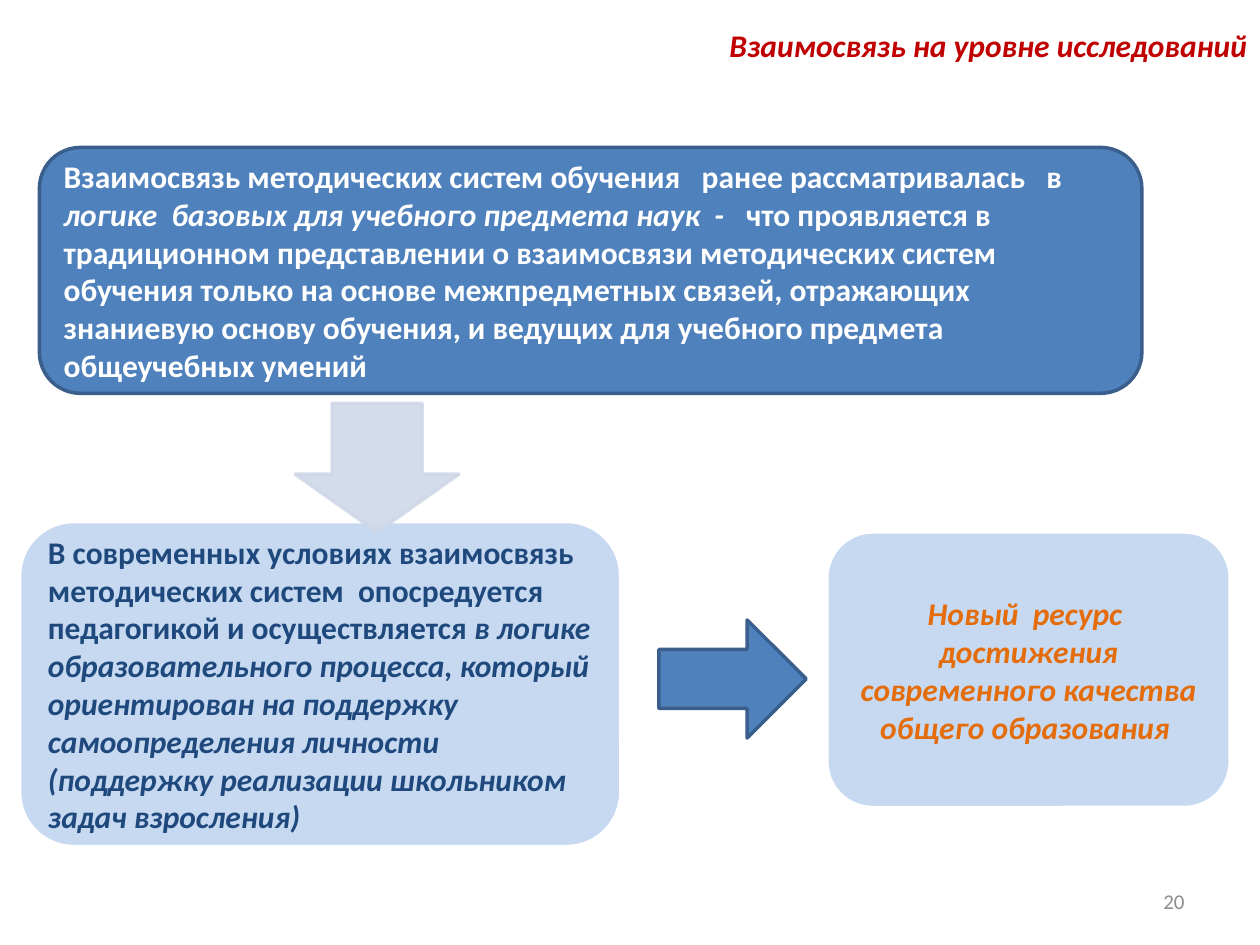
from lxml import etree
from pptx import Presentation
from pptx.dml.color import RGBColor
from pptx.enum import shapes, text
from pptx.oxml import ns
from pptx.util import Pt

WHITE = RGBColor(0xFF, 0xFF, 0xFF)
RED = RGBColor(0xC0, 0x00, 0x00)
GRAY = RGBColor(0x8C, 0x8C, 0x8C)
BLUE = RGBColor(0x4F, 0x81, 0xBD)
DARK_BLUE = RGBColor(0x3A, 0x5F, 0x8C)
PALE_BLUE = RGBColor(0xC6, 0xD9, 0xF1)
NAVY = RGBColor(0x1F, 0x49, 0x7D)
ORANGE = RGBColor(0xE4, 0x6C, 0x0A)
MIST = RGBColor(0xD0, 0xD8, 0xE8)

LEFT, CENTER, RIGHT = text.PP_ALIGN.LEFT, text.PP_ALIGN.CENTER, text.PP_ALIGN.RIGHT
TOP, MIDDLE = text.MSO_ANCHOR.TOP, text.MSO_ANCHOR.MIDDLE
PRESET = shapes.MSO_SHAPE

# Runs are (wording, italic); frames are (left, top, width, height) in points.
TITLE = [("Взаимосвязь на уровне исследований", True)]
TITLE_FRAME = (67.5, 11.5, 652.5, 29)
PAGE_NUMBER = "20"
PAGE_NUMBER_FRAME = (516, 500.5, 168, 28.75)

STATEMENTS = [
    {"frame": (22.5, 84.25, 630, 140.5), "fill": BLUE, "line": DARK_BLUE,
     "color": WHITE, "align": LEFT, "runs": [
         ("Взаимосвязь методических систем обучения   ранее рассматривалась   в", False),
         (" логике  базовых для учебного предмета наук  - ", True),
         ("  что проявляется в традиционном представлении о взаимосвязи "
          "методических систем обучения только на основе межпредметных связей, "
          "отражающих знаниевую основу обучения, и ведущих для учебного предмета "
          "общеучебных умений", False)]},
    {"frame": (11.25, 298, 343.5, 185.75), "fill": PALE_BLUE, "line": WHITE,
     "color": NAVY, "align": LEFT, "runs": [
         ("В современных условиях взаимосвязь методических систем  опосредуется "
          "педагогикой и осуществляется ", False),
         ("в логике образовательного процесса, который ориентирован на поддержку  "
          "самоопределения личности (поддержку реализации школьником задач "
          "взросления)", True)]},
    {"frame": (472.5, 304, 230.5, 157.5), "fill": PALE_BLUE, "line": WHITE,
     "color": ORANGE, "align": CENTER, "runs": [
         ("Новый  ресурс  достижения современного качества общего образования ", True)]},
]
RESULT_ARROW_FRAME = (376.5, 354.25, 84.25, 67.5)
TRANSITION_ARROW_FRAME = (168.75, 230.5, 93.5, 73.5)


def points(frame):
    return [Pt(value) for value in frame]


def write(shape, runs, color, align, anchor=MIDDLE, size=18, bold=True):
    frame = shape.text_frame
    frame.word_wrap = True
    frame.vertical_anchor = anchor
    paragraph = frame.paragraphs[0]
    paragraph.alignment = align
    for wording, italic in runs:
        run = paragraph.add_run()
        run.text = wording
        font = run.font
        font.name, font.size = "Calibri", Pt(size)
        font.bold, font.italic = bold, italic
        font.color.rgb = color


def add_block(slide, preset, frame, fill, line):
    block = slide.shapes.add_shape(preset, *points(frame))
    block.shadow.inherit = False
    block.fill.solid()
    block.fill.fore_color.rgb = fill
    block.line.color.rgb = line
    block.line.width = Pt(2)
    return block


def set_opacity(shape, percent):
    """Apply the opacity to both the fill and the outline."""
    for color in shape.element.spPr.iter(ns.qn("a:srgbClr")):
        etree.SubElement(color, ns.qn("a:alpha")).set("val", str(percent * 1000))


def main():
    deck = Presentation()
    deck.slide_width, deck.slide_height = Pt(720), Pt(540)
    slide = deck.slides.add_slide(deck.slide_layouts[5])

    title = slide.shapes.title
    title.left, title.top, title.width, title.height = points(TITLE_FRAME)
    write(title, TITLE, RED, RIGHT, anchor=TOP)
    title.text_frame.auto_size = text.MSO_AUTO_SIZE.SHAPE_TO_FIT_TEXT

    page_number = slide.shapes.add_textbox(*points(PAGE_NUMBER_FRAME))
    write(page_number, [(PAGE_NUMBER, False)], GRAY, RIGHT, size=12, bold=False)

    for item in STATEMENTS:
        statement = add_block(slide, PRESET.ROUNDED_RECTANGLE, item["frame"],
                              item["fill"], item["line"])
        write(statement, item["runs"], item["color"], item["align"])

    add_block(slide, PRESET.RIGHT_ARROW, RESULT_ARROW_FRAME, BLUE, DARK_BLUE)
    transition = add_block(slide, PRESET.DOWN_ARROW, TRANSITION_ARROW_FRAME, MIST, MIST)
    transition.adjustments[0] = 0.55
    transition.adjustments[1] = 0.45
    set_opacity(transition, 90)

    deck.save("out.pptx")


if __name__ == "__main__":
    main()
